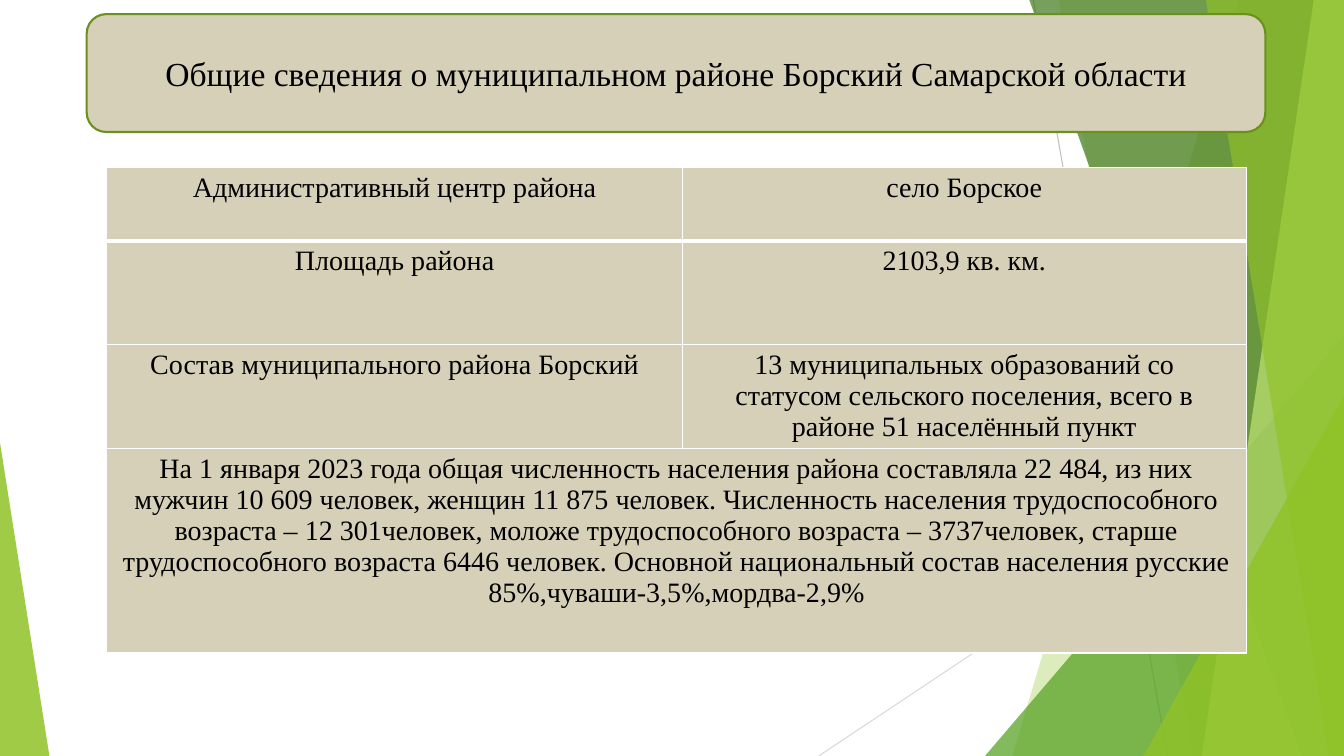
from lxml import etree
from pptx import Presentation
from pptx.dml.color import RGBColor
from pptx.enum.shapes import MSO_CONNECTOR, MSO_SHAPE
from pptx.enum.text import MSO_ANCHOR, PP_ALIGN
from pptx.oxml.ns import qn
from pptx.util import Inches, Pt

LINE = MSO_CONNECTOR.STRAIGHT
TRIANGLE = MSO_SHAPE.ISOSCELES_TRIANGLE
ROUND = MSO_SHAPE.ROUNDED_RECTANGLE
MIDDLE = MSO_ANCHOR.MIDDLE
CENTER = PP_ALIGN.CENTER

WIDE, HIGH = Inches(13.33), Inches(7.5)
FONT = "Times New Roman"
SAND, WHITE, BLACK = "D6D0B8", "FFFFFF", "000000"
LIME = "90C226"

RAYS = [
    (76.89, 0, 86.87, 100, "BFBFBF"),
    (100, 53.73, 60.92, 100, "D9D9D9"),
]
BANDS = [
    (92.12, 75.32, LIME, 30),
    (78.77, 88.75, LIME, 20),
]
WEDGE = (73.29, 44.4, 26.71, 55.6, 1, "54A021", 72)
FRONT = [
    (76.59, 96.85, "3F7819", 70),
    (97.75, 89.42, "C0E474", 70),
    (89.72, 98.87, LIME, 65),
]
CORNERS = [
    (85.07, 52.4, 14.93, 47.6, 1, LIME, 80),
    (0, 58.53, 3.68, 41.47, 0, LIME, 85),
]
TITLE = "Общие сведения о муниципальном районе Борский Самарской области"
FACTS = [
    ("Административный центр района", "село Борское"),
    ("Площадь района", "2103,9 кв. км."),
    ("Состав муниципального района Борский",
     "13 муниципальных образований со статусом сельского поселения, "
     "всего в районе 51 населённый пункт"),
]
PEOPLE = (
    "На 1 января 2023 года общая численность населения района составляла "
    "22 484, из них мужчин 10 609 человек, женщин 11 875 человек. "
    "Численность населения трудоспособного возраста – 12 301человек, "
    "моложе трудоспособного возраста – 3737человек, старше трудоспособного "
    "возраста 6446 человек. Основной национальный состав населения русские "
    "85%,чуваши-3,5%,мордва-2,9%"
)
COLS = (42.83, 41.94)
ROWS = (9.73, 13.73, 13.73, 27.07)


def across(share):
    """Turn a percentage of the slide's width into a length."""
    return round(WIDE * share / 100)


def down(share):
    """Turn a percentage of the slide's height into a length."""
    return round(HIGH * share / 100)


def place(left, top, width, height):
    """Turn a box in percentages into lengths."""
    return across(left), down(top), across(width), down(height)


def color(code):
    """Read a hex string as a colour."""
    return RGBColor.from_string(code)


def paint(item, code):
    """Fill a shape or cell with one colour."""
    item.fill.solid()
    item.fill.fore_color.rgb = color(code)


def tint(shape, code, alpha):
    """Give a shape a see-through fill without outline or shadow."""
    shape.shadow.inherit = False
    paint(shape, code)
    shape.line.fill.background()
    tone = shape.fill._xPr.find(".//" + qn("a:srgbClr"))
    etree.SubElement(tone, qn("a:alpha"), val=str(alpha * 1000))


def add_ray(slide, left, top, right, base, code):
    """Draw one thin line."""
    ray = slide.shapes.add_connector(
        LINE, across(left), down(top), across(right), down(base))
    ray.line.color.rgb = color(code)
    ray.line.width = Pt(0.75)
    etree.SubElement(ray._element.spPr, qn("a:effectLst"))


def add_band(slide, top, base, code, alpha):
    """Draw a slanted band that reaches the right edge."""
    pen = slide.shapes.build_freeform(across(top), 0)
    pen.add_line_segments(
        [(WIDE, 0), (WIDE, HIGH), (across(base), HIGH)], close=True)
    tint(pen.convert_to_shape(), code, alpha)


def add_wedge(slide, left, top, width, height, peak, code, alpha):
    """Draw a triangle with its peak at the given share of its width."""
    wedge = slide.shapes.add_shape(TRIANGLE, *place(left, top, width, height))
    wedge.adjustments[0] = peak
    tint(wedge, code, alpha)


def write(frame, text, size):
    """Set one centred paragraph."""
    frame.word_wrap = True
    para = frame.paragraphs[0]
    para.alignment = CENTER
    run = para.add_run()
    run.text = text
    look = {"name": FONT, "size": Pt(size), "bold": False}
    for key, value in look.items():
        setattr(run.font, key, value)
    run.font.color.rgb = color(BLACK)


def add_title(slide):
    """Draw the rounded title box."""
    box = slide.shapes.add_shape(ROUND, *place(6.45, 1.87, 87.7, 15.6))
    box.shadow.inherit = False
    paint(box, SAND)
    box.line.color.rgb = color("6B901C")
    box.line.width = Pt(1.5)
    box.text_frame.vertical_anchor = MIDDLE
    write(box.text_frame, TITLE, 24)


def edge(cell, row):
    """Draw white borders, thick below the first row."""
    sizes = {"L": 1, "R": 1, "T": 3 if row == 1 else 1,
             "B": 3 if row == 0 else 1}
    props = cell._tc.get_or_add_tcPr()
    for side, size in sizes.items():
        line = etree.SubElement(props, qn("a:ln" + side), w=str(Pt(size)))
        fill = etree.SubElement(line, qn("a:solidFill"))
        etree.SubElement(fill, qn("a:srgbClr"), val=WHITE)


def add_facts(slide):
    """Build the table of district facts."""
    box = place(7.95, 22.13, sum(COLS), sum(ROWS))
    table = slide.shapes.add_table(len(ROWS), len(COLS), *box).table
    for col, share in zip(table.columns, COLS):
        col.width = across(share)
    for row, share in zip(table.rows, ROWS):
        row.height = down(share)
    last = len(ROWS) - 1
    table.cell(last, 0).merge(table.cell(last, 1))
    for r in range(len(ROWS)):
        for c in range(len(COLS)):
            cell = table.cell(r, c)
            edge(cell, r)
            paint(cell, SAND)
            cell.margin_left = cell.margin_right = Inches(0.35 if c else 0.14)
    for r, pair in enumerate(FACTS):
        for c, text in enumerate(pair):
            write(table.cell(r, c).text_frame, text, 20)
    write(table.cell(last, 0).text_frame, PEOPLE, 20)


def main():
    """Build and save the slide."""
    deck = Presentation()
    deck.slide_width, deck.slide_height = WIDE, HIGH
    slide = deck.slides.add_slide(deck.slide_layouts[6])
    for ray in RAYS:
        add_ray(slide, *ray)
    for band in BANDS:
        add_band(slide, *band)
    add_wedge(slide, *WEDGE)
    for band in FRONT:
        add_band(slide, *band)
    for wedge in CORNERS:
        add_wedge(slide, *wedge)
    add_title(slide)
    add_facts(slide)
    deck.save("out.pptx")


if __name__ == "__main__":
    main()
